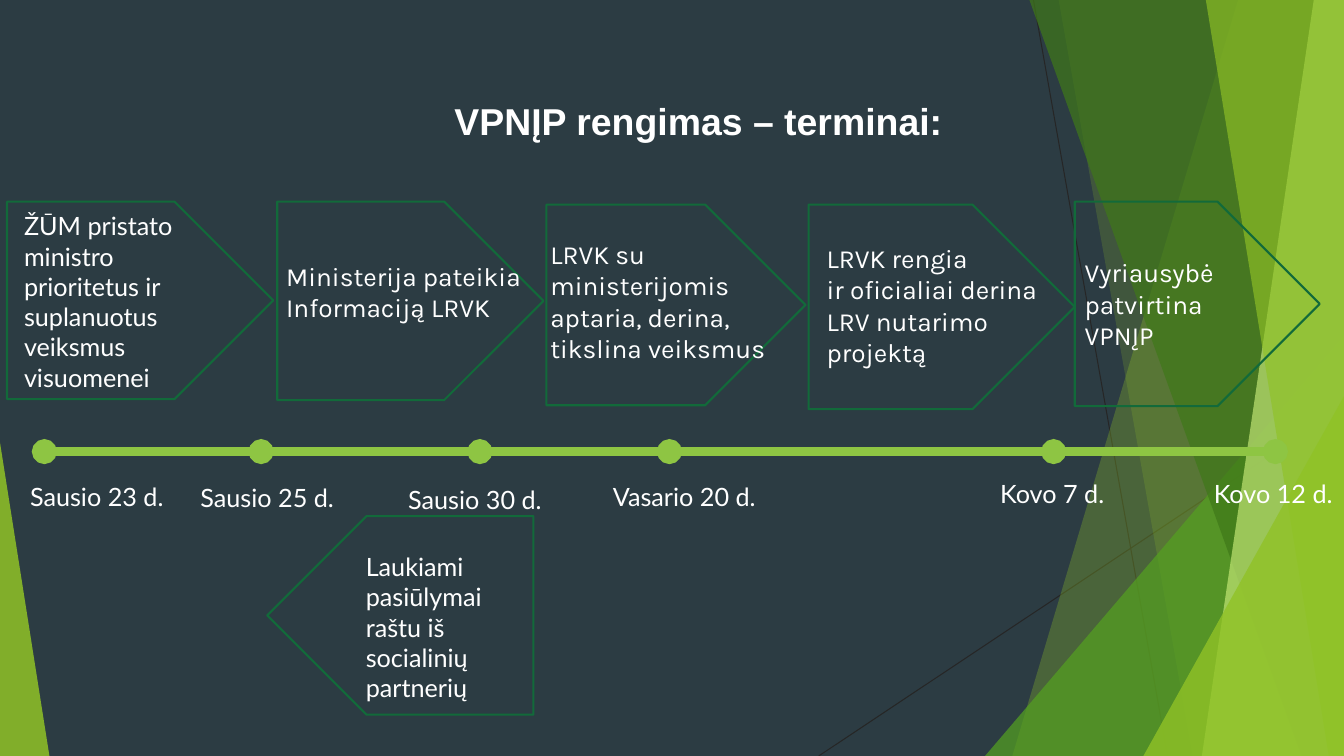
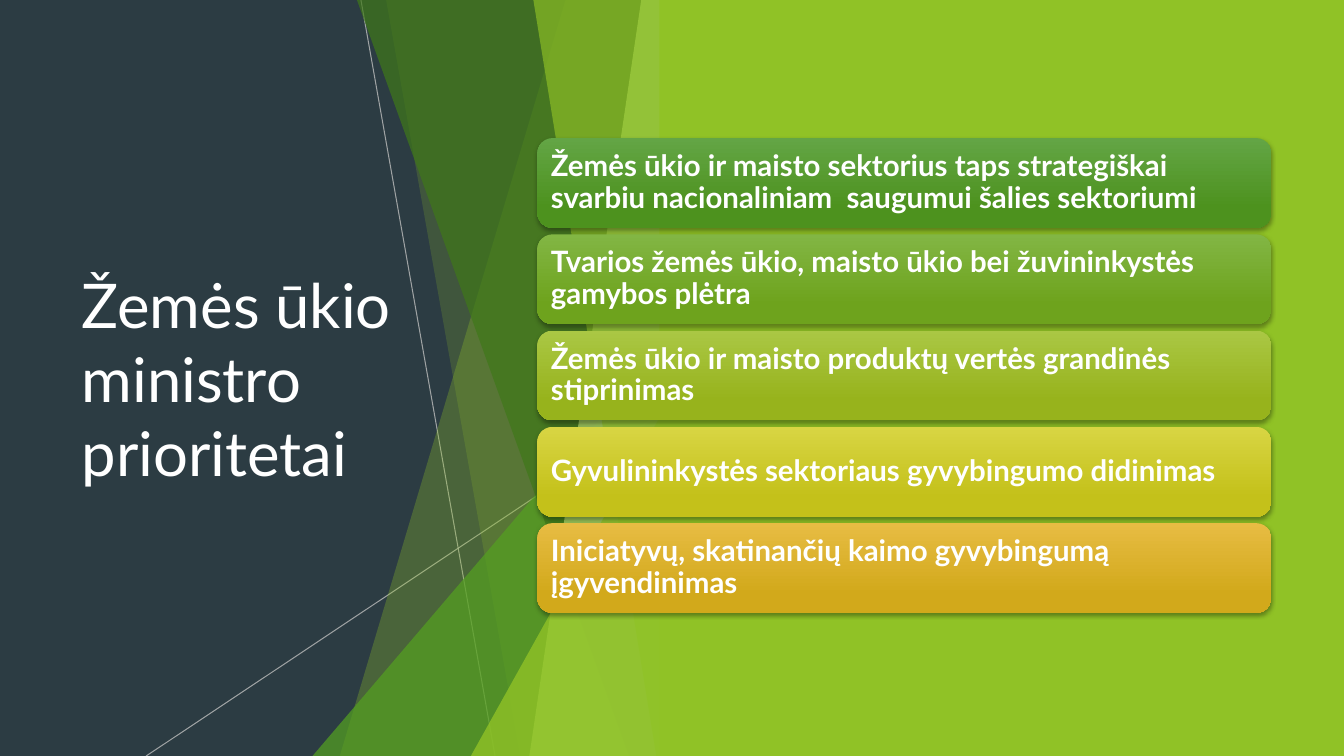
from dataclasses import dataclass
from itertools import pairwise

from lxml import etree
from pptx import Presentation
from pptx.dml.color import RGBColor
from pptx.enum import shapes, text
from pptx.oxml.ns import qn
from pptx.util import Inches, Pt


@dataclass(frozen=True)
class Theme:
    dark: str = "2C3C43"
    lime: str = "90C226"
    leaf: str = "54A021"
    moss: str = "3F7819"
    pale: str = "C0E474"
    ink: str = "262626"
    mist: str = "BFBFBF"
    track: str = "8EC543"
    edge: str = "126A3A"
    white: str = "FFFFFF"
    head: float = 26.7
    big: float = 44
    card: float = 21
    step: float = 18.7
    note: float = 18
    bold: str = "Arial"
    wide: str = "Karla"
    body: str = "Lato"


look = Theme()
wide, high = 13.33, 7.5
kind = shapes.MSO_SHAPE
straight = shapes.MSO_CONNECTOR.STRAIGHT
middle = text.MSO_ANCHOR.MIDDLE
left, center = text.PP_ALIGN.LEFT, text.PP_ALIGN.CENTER


def paint(shape, fill=None, line=None, width=0.75, alpha=100):
    if fill:
        shape.fill.solid()
        shape.fill.fore_color.rgb = RGBColor.from_string(fill)
    elif hasattr(shape, "fill"):
        shape.fill.background()
    if line:
        shape.line.color.rgb = RGBColor.from_string(line)
        shape.line.width = Pt(width)
    else:
        shape.line.fill.background()
    props = shape._element.spPr
    if alpha < 100:
        for color in props.iter(qn("a:srgbClr")):
            etree.SubElement(color, qn("a:alpha")).set("val", str(alpha * 1000))
    return etree.SubElement(props, qn("a:effectLst"))


def write(frame, lines, size, face, bold=False, align=left):
    frame.word_wrap = True
    for row, line in enumerate(lines):
        para = frame.add_paragraph() if row else frame.paragraphs[0]
        para.alignment = align
        run = para.add_run()
        run.text = line
        run.font.size = Pt(size)
        run.font.name = face
        run.font.bold = bold
        run.font.color.rgb = RGBColor.from_string(look.white)


deck = Presentation()
deck.slide_width, deck.slide_height = Inches(wide), Inches(high)
back = deck.slide_master.background.fill
back.solid()
back.fore_color.rgb = RGBColor.from_string(look.dark)

wires = [((10.25, 0), (11.58, high)), ((wide, 4.03), (8.12, high))]
facets = [
    ("band", 12.28, 10.04, look.lime, 30),
    ("band", 10.5, 11.83, look.lime, 20),
    ("peak", 9.77, 3.33, look.leaf, 72),
    ("band", 10.21, 12.91, look.moss, 70),
    ("band", 13.03, 11.92, look.pale, 70),
    ("band", 11.96, 13.18, look.lime, 65),
    ("peak", 11.34, 3.93, look.lime, 80),
]
heads = [
    ("VPNĮP rengimas – terminai:", (1.42, 0.92, 11.02, 0.55),
     look.head, look.bold, True, center, 0, look.ink, 100),
    ("Žemės ūkio ministro prioritetai", (0.71, 1.51, 3.88, 4.48),
     look.big, look.body, False, left, -6.67, look.mist, 78),
]
slides = []
for title, place, size, face, bold, align, shift, line, alpha in heads:
    slide = deck.slides.add_slide(deck.slide_layouts[5])
    slides.append(slide)
    head = slide.shapes.title
    head.left, head.top, head.width, head.height = map(Inches, place)
    head.text_frame.auto_size = text.MSO_AUTO_SIZE.NONE
    head.text_frame.vertical_anchor = middle
    write(head.text_frame, [title], size, face, bold, align)
    for (x1, y1), (x2, y2) in wires:
        wire = slide.shapes.add_connector(
            straight, Inches(x1 + shift), Inches(y1), Inches(x2 + shift), Inches(y2))
        paint(wire, line=line, alpha=alpha)
    edge = wide + shift
    for form, first, second, color, clear in facets:
        x = first + shift
        if form == "band":
            pen = slide.shapes.build_freeform(Inches(x), 0)
            pen.add_line_segments([
                (Inches(edge), 0),
                (Inches(edge), Inches(high)),
                (Inches(second + shift), Inches(high)),
            ])
            facet = pen.convert_to_shape()
        else:
            facet = slide.shapes.add_shape(
                kind.ISOSCELES_TRIANGLE, Inches(x), Inches(second),
                Inches(edge - x), Inches(high - second))
            facet.adjustments[0] = 1
        paint(facet, color, alpha=clear)

plan, goals = slides

wedge = plan.shapes.add_shape(
    kind.ISOSCELES_TRIANGLE, 0, Inches(4.39), Inches(0.49), Inches(3.11))
wedge.adjustments[0] = 0
paint(wedge, look.lime, alpha=85)

steps = [
    ((0.07, 2, 2.64, 1.96), 0, (0.14, 2.03, 1.9, 1.92), look.note, look.body,
     ["ŽŪM pristato ministro prioritetus ir suplanuotus veiksmus visuomenei"]),
    ((2.75, 2, 2.64, 1.97), 0, (2.74, 2.53, 2.74, 0.73), look.step, look.wide,
     ["Ministerija pateikia", "Informaciją LRVK"]),
    ((5.42, 2.03, 2.57, 1.99), 0, (5.36, 2.29, 2.38, 1.39), look.step, look.wide,
     ["LRVK su", "ministerijomis", "aptaria, derina,", "tikslina veiksmus"]),
    ((8.02, 2.03, 2.64, 2.03), 0, (8.1, 2.33, 2.53, 1.39), look.step, look.wide,
     ["LRVK rengia", "ir oficialiai derina", "LRV nutarimo", "projektą"]),
    ((10.66, 2, 2.43, 2.03), 0, (10.66, 2, 2.43, 2.03), look.step, look.wide,
     ["Vyriausybė", "patvirtina", "VPNĮP"]),
    ((2.65, 5.12, 2.64, 1.97), 180, (3.53, 5.41, 1.46, 1.62), look.note, look.body,
     ["Laukiami pasiūlymai raštu iš socialinių partnerių"]),
]
for place, turn, spot, size, face, lines in steps:
    arrow = plan.shapes.add_shape(kind.PENTAGON, *map(Inches, place))
    arrow.rotation = turn
    paint(arrow, line=look.edge, width=1.5)
    box = plan.shapes.add_textbox(*map(Inches, spot))
    box.text_frame.vertical_anchor = middle
    write(box.text_frame, lines, size, face)

level = 4.48
stops = [0.44, 2.59, 4.76, 6.64, 10.45, 12.65]
for start, end in pairwise(stops):
    track = plan.shapes.add_connector(
        straight, Inches(start), Inches(level), Inches(end), Inches(level))
    paint(track, line=look.track, width=6)
    ends = ["a:headEnd", "a:tailEnd"] if end == stops[-1] else ["a:headEnd"]
    for tag in ends:
        etree.SubElement(track.line._ln, qn(tag)).set("type", "oval")

dates = [
    (0.2, 4.73, 1.77, "Sausio 23 d."),
    (1.89, 4.74, 1.77, "Sausio 25 d."),
    (3.95, 4.76, 2.19, "Sausio 30 d."),
    (5.98, 4.73, 2.57, "Vasario 20 d."),
    (9.82, 4.7, 1.68, "Kovo 7 d."),
    (11.94, 4.7, 1.4, "Kovo 12 d."),
]
for x, y, width, date in dates:
    box = plan.shapes.add_textbox(Inches(x), Inches(y), Inches(width), Inches(0.4))
    write(box.text_frame, [date], look.note, look.body)

panel = goals.shapes.add_shape(
    kind.RECTANGLE, Inches(6.54), 0, Inches(wide - 6.54), Inches(high))
paint(panel, look.lime)

cards = [
    ("63A545", "4D921E", "Žemės ūkio ir maisto sektorius taps strategiškai "
     "svarbiu nacionaliniam  saugumui šalies sektoriumi"),
    ("82B644", "6EA31D", "Tvarios žemės ūkio, maisto ūkio bei žuvininkystės gamybos plėtra"),
    ("AAC744", "97B31C", "Žemės ūkio ir maisto produktų vertės grandinės stiprinimas"),
    ("D8D543", "C4C11A", "Gyvulininkystės sektoriaus gyvybingumo didinimas"),
    ("E7BC43", "D2A91B", "Iniciatyvų, skatinančių kaimo gyvybingumą įgyvendinimas"),
]
for row, (light, deep, goal) in enumerate(cards):
    card = goals.shapes.add_shape(
        kind.ROUNDED_RECTANGLE, Inches(5.33), Inches(1.37 + row * 0.955),
        Inches(7.28), Inches(0.89))
    effects = paint(card, light)
    card.fill.gradient()
    card.fill.gradient_angle = 270
    for stop, color, point in zip(card.fill.gradient_stops, (light, deep), (0, 0.78)):
        stop.color.rgb = RGBColor.from_string(color)
        stop.position = point
    shade = etree.SubElement(effects, qn("a:outerShdw"))
    for key, value in {"blurRad": Pt(3), "dist": Pt(2), "dir": 5400000, "rotWithShape": 0}.items():
        shade.set(key, str(int(value)))
    tone = etree.SubElement(shade, qn("a:srgbClr"))
    tone.set("val", "000000")
    etree.SubElement(tone, qn("a:alpha")).set("val", "35000")
    frame = card.text_frame
    frame.vertical_anchor = middle
    frame.margin_left = frame.margin_right = Inches(0.09)
    frame.margin_top = frame.margin_bottom = Inches(0.05)
    write(frame, [goal], look.card, look.body, True)
    frame.paragraphs[0].line_spacing = 0.9

deck.save("out.pptx")
